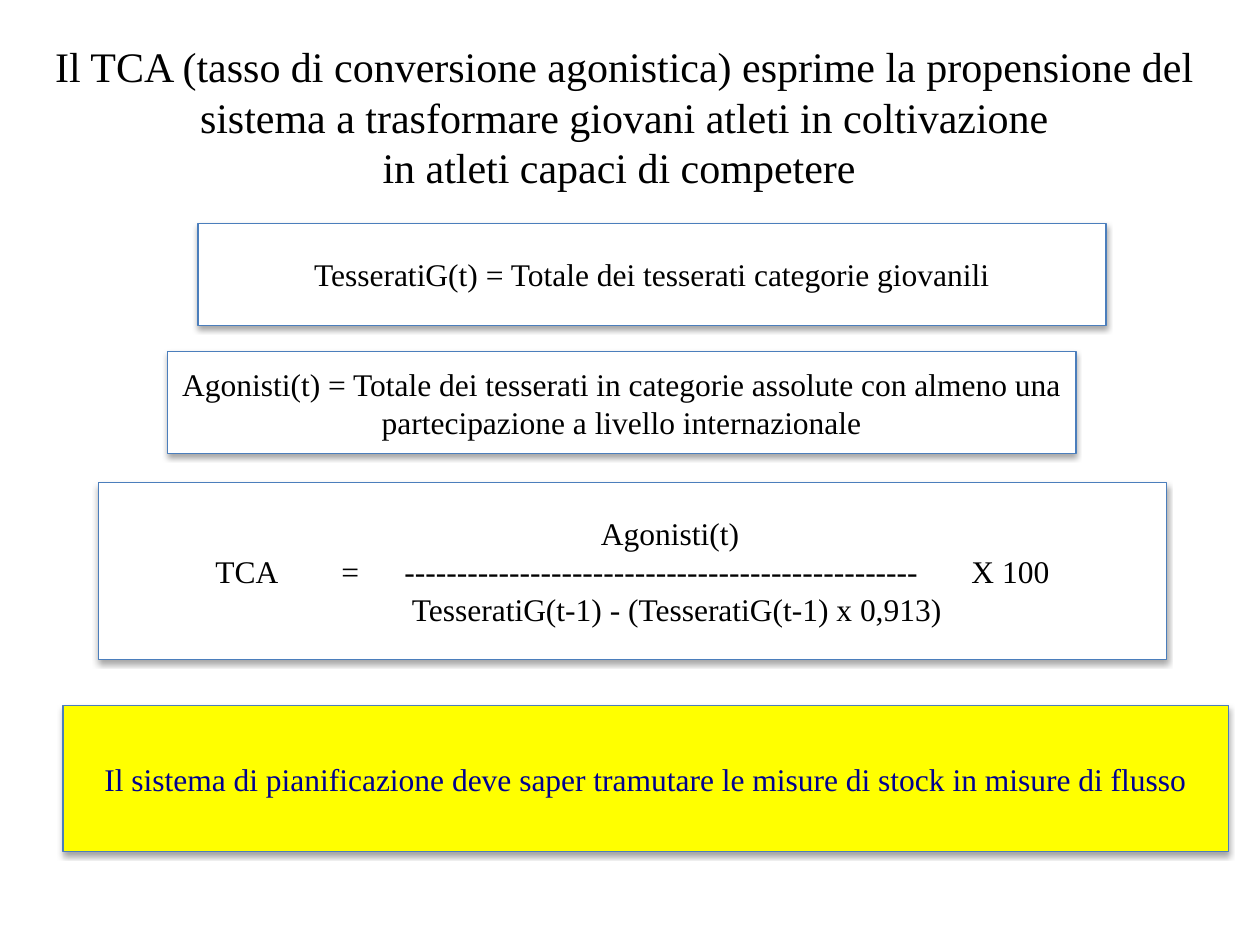
from lxml.etree import SubElement
from pptx import Presentation
from pptx.dml.color import RGBColor
from pptx.enum.shapes import MSO_SHAPE
from pptx.enum.text import MSO_ANCHOR, PP_ALIGN
from pptx.oxml.ns import qn
from pptx.util import Cm, Pt


def color(code):
    return RGBColor.from_string(code)


class Page:
    font = "Times New Roman"
    ink = "000000"
    edge = "4B7EBC"

    def __init__(self, slide):
        self.slide = slide

    def label(self, shape, text, size, ink):
        frame = shape.text_frame
        frame.word_wrap = True
        frame.vertical_anchor = MSO_ANCHOR.MIDDLE
        frame.text = text
        for para in frame.paragraphs:
            para.alignment = PP_ALIGN.CENTER
            for run in para.runs:
                run.font.name = self.font
                run.font.size = Pt(size)
                run.font.color.rgb = color(ink)

    def shade(self, shape):
        """Give the shape a soft shadow that falls straight down."""
        shape.shadow.inherit = False
        effects = shape.element.spPr.find(qn("a:effectLst"))
        outer = SubElement(effects, qn("a:outerShdw"), blurRad=str(Pt(3.1)),
                           dist=str(Pt(1.8)), dir="5400000", rotWithShape="0")
        black = SubElement(outer, qn("a:srgbClr"), val="000000")
        SubElement(black, qn("a:alpha"), val="35000")

    def title(self, text, left, top, width, height):
        box = self.slide.shapes.add_textbox(
            Cm(left), Cm(top), Cm(width), Cm(height))
        self.label(box, text, 24, self.ink)

    def panel(self, text, left, top, width, height, fill="FFFFFF", ink=ink):
        box = self.slide.shapes.add_shape(
            MSO_SHAPE.RECTANGLE, Cm(left), Cm(top), Cm(width), Cm(height))
        box.fill.solid()
        box.fill.fore_color.rgb = color(fill)
        box.line.color.rgb = color(self.edge)
        box.line.width = Pt(0.75)
        self.shade(box)
        self.label(box, text, 18, ink)


def main():
    deck = Presentation()
    deck.slide_width, deck.slide_height = Cm(25.4), Cm(19.05)
    page = Page(deck.slides.add_slide(deck.slide_layouts[6]))

    page.title("Il TCA (tasso di conversione agonistica) esprime la propensione "
               "del sistema a trasformare giovani atleti in coltivazione\v"
               "in atleti capaci di competere ", 0.41, 0.76, 24.36, 3.18)
    page.panel("TesseratiG(t) = Totale dei tesserati categorie giovanili",
               3.99, 4.5, 18.31, 2.06)
    page.panel("Agonisti(t) = Totale dei tesserati in categorie assolute con "
               "almeno una partecipazione a livello internazionale",
               3.38, 7.09, 18.31, 2.06)
    rule = "-" * 49
    page.panel("\t\tAgonisti(t)\t\n"
               f"TCA\t=\t{rule}\tX 100\n"
               "\t\tTesseratiG(t-1) - (TesseratiG(t-1) x 0,913)\t",
               1.98, 9.73, 21.54, 3.56)
    page.panel("Il sistema di pianificazione deve saper tramutare le misure di "
               "stock in misure di flusso",
               1.27, 14.22, 23.5, 2.95, fill="FFFF00", ink="000090")

    deck.save("out.pptx")


if __name__ == "__main__":
    main()
